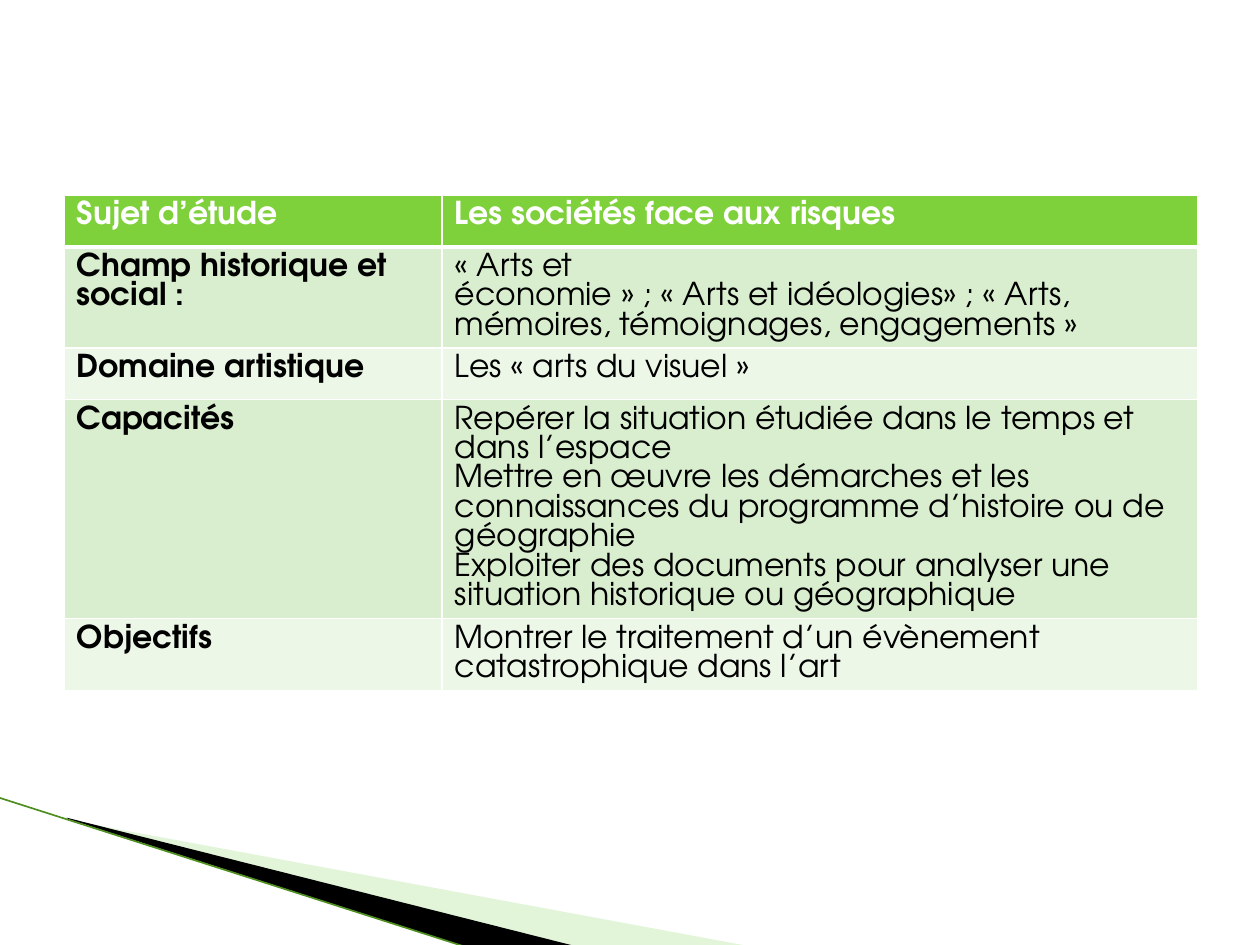
from lxml import etree
from pptx import Presentation
from pptx.dml.color import RGBColor
from pptx.oxml.ns import qn
from pptx.util import Inches, Pt

ROWS = [
    ("Sujet d’étude", ["Les sociétés face aux risques"]),
    ("Champ historique et social :", [
        "« Arts et",
        "économie » ; « Arts et idéologies» ; « Arts,",
        "mémoires, témoignages, engagements »",
    ]),
    ("Domaine artistique", ["Les « arts du visuel »"]),
    ("Capacités", [
        "Repérer la situation étudiée dans le temps et dans l’espace",
        "Mettre en œuvre les démarches et les connaissances du programme "
        "d’histoire ou de géographie",
        "Exploiter des documents pour analyser une situation historique ou géographique",
    ]),
    ("Objectifs", ["Montrer le traitement d’un évènement catastrophique dans l’art"]),
]
THEME = {
    "font": "TeX Gyre Adventor", "size": 18,
    "white": "FFFFFF", "black": "000000", "header": "7FD13B",
    "bands": ("D8EECE", "ECF7E8"),
    "pale": "B8E7A1", "edge": "4E8F20",
}
TABLE_LEFT, TABLE_TOP = 0.51, 1.55
COLUMN_WIDTHS = (3, 6)
ROW_HEIGHTS = (0.41, 0.8, 0.41, 1.74, 0.57)
PALE_WEDGE = [(0.55, 6.51), (5.95, 7.51), (4.56, 7.51), (0.55, 6.5)]
BLACK_WEDGE = [(0.53, 6.49), (4.57, 7.51), (3.72, 7.52), (0.54, 6.5)]
EDGE_LINE = [(-0.01, 6.33), (3.71, 7.52)]


def color(name):
    return RGBColor.from_string(name)


def add_wedge(slide, points, fill, opacity=None):
    builder = slide.shapes.build_freeform(
        *(Inches(value) for value in points[0]), scale=1.0)
    builder.add_line_segments([(Inches(x), Inches(y)) for x, y in points[1:]])
    wedge = builder.convert_to_shape()
    wedge.shadow.inherit = False
    wedge.fill.solid()
    wedge.fill.fore_color.rgb = color(fill)
    wedge.line.fill.background()
    if opacity is not None:
        tint = next(wedge.element.spPr.iter(qn("a:srgbClr")))
        etree.SubElement(tint, qn("a:alpha"), val=str(opacity * 1000))


def add_edge(slide, points):
    start, end = points
    edge = slide.shapes.add_connector(
        1, *(Inches(value) for value in start + end))
    edge.line.color.rgb = color(THEME["edge"])
    edge.line.width = Pt(0.95)
    etree.SubElement(edge.element.spPr, qn("a:effectLst"))


def write(cell, paragraphs, bold=False, ink=THEME["black"]):
    frame = cell.text_frame
    for index, text in enumerate(paragraphs):
        para = frame.add_paragraph() if index else frame.paragraphs[0]
        span = para.add_run()
        span.text = text
        span.font.name = THEME["font"]
        span.font.size = Pt(THEME["size"])
        span.font.bold = bold
        span.font.color.rgb = color(ink)


def set_borders(cell, **widths):
    """Draw white borders, placed before the cell fill as the schema asks."""
    properties = cell._tc.get_or_add_tcPr()
    for index, (side, width) in enumerate(widths.items()):
        border = etree.Element(qn(f"a:ln{side}"), w=str(Pt(width)))
        solid = etree.SubElement(border, qn("a:solidFill"))
        etree.SubElement(solid, qn("a:srgbClr"), val=THEME["white"])
        properties.insert(index, border)


def add_study_table(slide):
    table = slide.shapes.add_table(
        len(ROWS), len(COLUMN_WIDTHS), Inches(TABLE_LEFT), Inches(TABLE_TOP),
        Inches(sum(COLUMN_WIDTHS)), Inches(sum(ROW_HEIGHTS))).table
    for column, width in zip(table.columns, COLUMN_WIDTHS):
        column.width = Inches(width)
    for index, (label, details) in enumerate(ROWS):
        is_header = index == 0
        table.rows[index].height = Inches(ROW_HEIGHTS[index])
        fill = THEME["header"] if is_header else THEME["bands"][(index - 1) % 2]
        ink = THEME["white"] if is_header else THEME["black"]
        for position, paragraphs in enumerate(([label], details)):
            cell = table.cell(index, position)
            cell.fill.solid()
            cell.fill.fore_color.rgb = color(fill)
            write(cell, paragraphs, bold=is_header or position == 0, ink=ink)
            set_borders(cell, L=1, R=1, T=3 if index == 1 else 1,
                        B=3 if is_header else 1)


def main():
    deck = Presentation()
    deck.slide_width, deck.slide_height = Inches(10), Inches(7.5)
    page = deck.slides.add_slide(deck.slide_layouts[6])
    add_wedge(page, PALE_WEDGE, THEME["pale"], opacity=40)
    add_wedge(page, BLACK_WEDGE, THEME["black"])
    add_edge(page, EDGE_LINE)
    add_study_table(page)
    deck.save("out.pptx")


if __name__ == "__main__":
    main()
